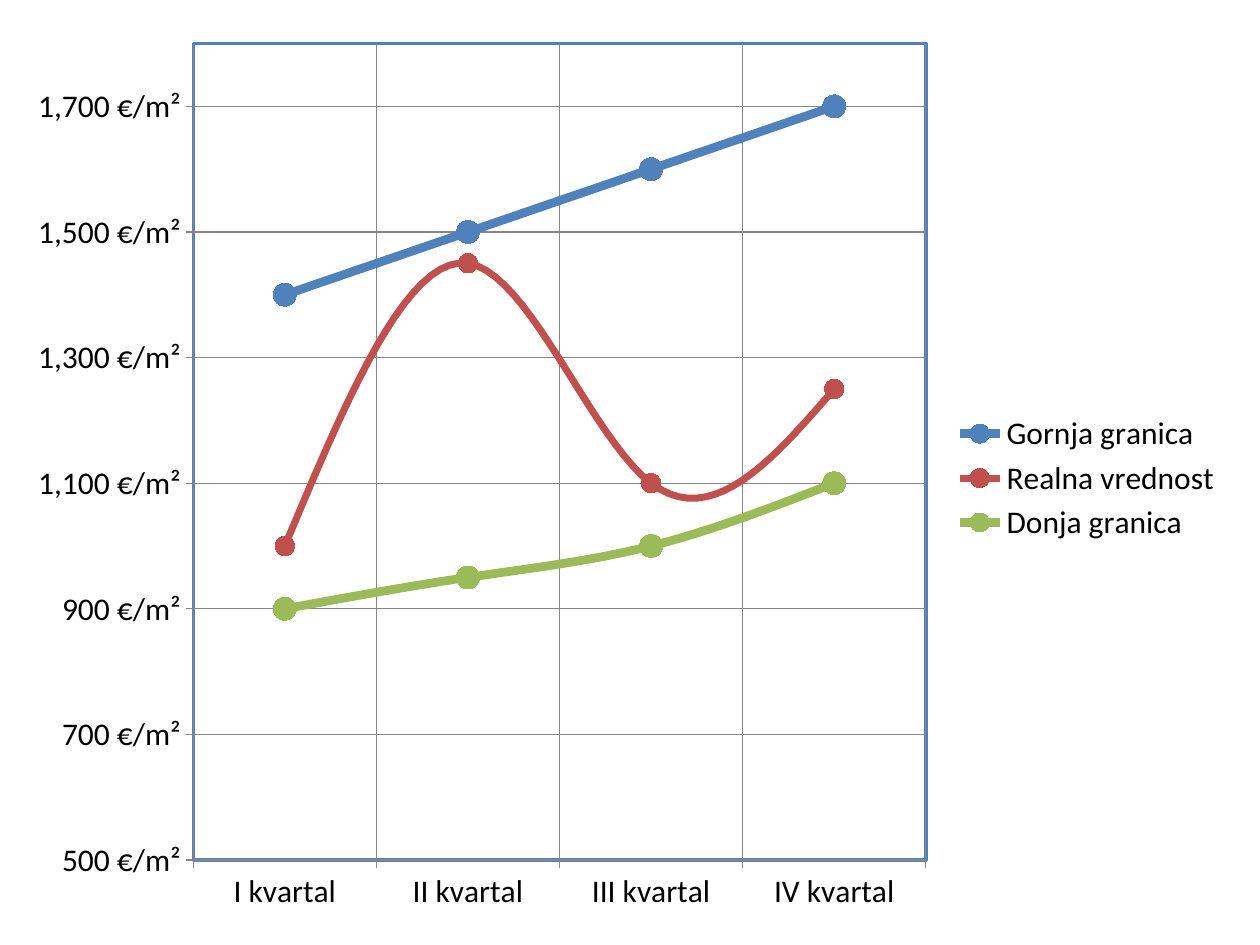
from pptx import Presentation
from pptx.chart.data import CategoryChartData
from pptx.dml.color import RGBColor
from pptx.enum.chart import XL_CHART_TYPE, XL_LEGEND_POSITION, XL_MARKER_STYLE, XL_TICK_MARK
from pptx.oxml import parse_xml
from pptx.oxml.ns import nsdecls, qn
from pptx.util import Pt


def color(value):
    return RGBColor.from_string(value)


presentation = Presentation()
presentation.slide_width = Pt(720)
presentation.slide_height = Pt(540)
slide = presentation.slides.add_slide(presentation.slide_layouts[6])

series_styles = [
    ("Gornja granica", (1400, 1500, 1600, 1700), "4F81BD", 5, 13),
    ("Realna vrednost", (1000, 1450, 1100, 1250), "C0504D", 4, 11),
    ("Donja granica", (900, 950, 1000, 1100), "9BBB59", 5, 13),
]
chart_data = CategoryChartData()
chart_data.categories = ["I kvartal", "II kvartal", "III kvartal", "IV kvartal"]
for name, values, line_color, width, marker_size in series_styles:
    chart_data.add_series(name, values)

chart = slide.shapes.add_chart(
    XL_CHART_TYPE.LINE_MARKERS, Pt(7.9), Pt(15.1), Pt(697.7), Pt(516.2), chart_data
).chart
chart.has_title = False
chart.font.name = "Calibri"
chart.font.size = Pt(18)
chart.font.color.rgb = color("000000")
chart.has_legend = True
chart.legend.position = XL_LEGEND_POSITION.RIGHT
chart.legend.include_in_layout = False
chart.plots[0].vary_by_categories = False

for series, (name, values, line_color, width, marker_size) in zip(chart.plots[0].series, series_styles):
    series.smooth = True
    series.format.line.color.rgb = color(line_color)
    series.format.line.width = Pt(width)
    series.marker.style = XL_MARKER_STYLE.CIRCLE
    series.marker.size = marker_size
    series.marker.format.fill.solid()
    series.marker.format.fill.fore_color.rgb = color(line_color)
    series.marker.format.line.color.rgb = color(line_color)

for axis in (chart.category_axis, chart.value_axis):
    axis.has_major_gridlines = True
    axis.major_tick_mark = XL_TICK_MARK.OUTSIDE
    axis.minor_tick_mark = XL_TICK_MARK.NONE
    for line in (axis.format.line, axis.major_gridlines.format.line):
        line.color.rgb = color("868686")
        line.width = Pt(0.75)

value_axis = chart.value_axis
value_axis.minimum_scale = 500
value_axis.maximum_scale = 1800
value_axis.major_unit = 200
value_axis.tick_labels.number_format = '#,##0\\ "€/m²"'
value_axis.tick_labels.number_format_is_linked = False

plot_area = chart.value_axis._element.getparent()
for layout in plot_area.findall(qn("c:layout")):
    plot_area.remove(layout)
plot_area.insert(0, parse_xml(
    f'<c:layout {nsdecls("c")}><c:manualLayout><c:layoutTarget val="inner"/>'
    '<c:xMode val="edge"/><c:yMode val="edge"/><c:x val="0.147"/><c:y val="0.019"/>'
    '<c:w val="0.6"/><c:h val="0.904"/></c:manualLayout></c:layout>'
))
plot_area.append(parse_xml(
    f'<c:spPr {nsdecls("c", "a")}><a:noFill/><a:ln w="{Pt(2)}"><a:solidFill>'
    '<a:srgbClr val="4F81BD"/></a:solidFill></a:ln></c:spPr>'
))

presentation.save("out.pptx")
